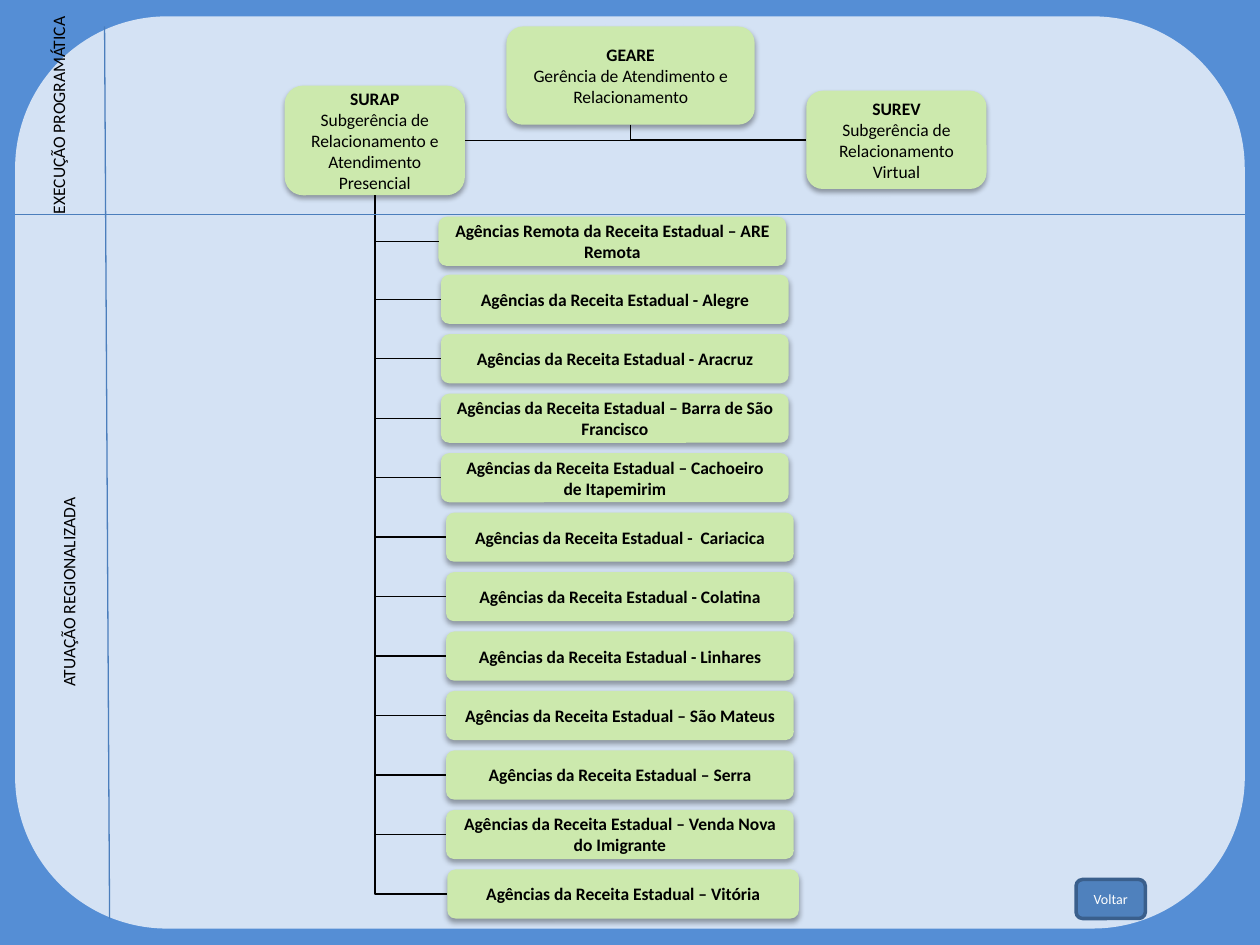
from dataclasses import dataclass

from lxml import etree
from pptx import Presentation
from pptx.dml.color import RGBColor
from pptx.enum import shapes, text
from pptx.oxml import ns
from pptx.util import Inches, Pt


@dataclass(frozen=True)
class Theme:
    back: str = "558ED5"
    panel: str = "D4E2F4"
    unit: str = "CCE9AD"
    button: str = "4F81BD"
    button_edge: str = "3A5F8C"
    divider: str = "4B7EBC"
    ink: str = "000000"
    white: str = "FFFFFF"
    font: str = "Calibri"
    body: float = 10
    small: float = 8
    line: float = 0.75


@dataclass(frozen=True)
class Box:
    left: float
    top: float
    width: float
    height: float
    title: str = ""
    detail: str = ""


T = Theme()
TOP, LEFT, BOTTOM, RIGHT = range(4)

PANEL = Box(0.12, 0.13, 9.76, 7.24)
GEARE = Box(4.02, 0.21, 1.97, 0.78, "GEARE", "Gerência de Atendimento e Relacionamento")
SURAP = Box(2.26, 0.68, 1.43, 0.87, "SURAP",
            "Subgerência de Relacionamento e Atendimento Presencial")
SUREV = Box(6.4, 0.72, 1.43, 0.78, "SUREV", "Subgerência de Relacionamento Virtual")
BACK_BUTTON = Box(8.54, 6.98, 0.55, 0.31, "Voltar")
BANDS = [Box(0.33, 0.02, 0.37, 1.79, "EXECUÇÃO PROGRAMÁTICA"),
         Box(0.41, 2.58, 0.37, 4.24, "ATUAÇÃO REGIONALIZADA")]

# Agencies: a remote one, then the cities at an equal pitch
FIRST_CITY, PITCH, AGENCY_W, AGENCY_H = 2.18, 0.472, 2.76, 0.39
CITIES = ["- Alegre", "- Aracruz", "– Barra de São Francisco",
          "– Cachoeiro de Itapemirim", "-  Cariacica", "- Colatina", "- Linhares",
          "– São Mateus", "– Serra", "– Venda Nova do Imigrante", "– Vitória"]
CITY_LEFTS = [3.5] * 4 + [3.54] * 6 + [3.55]
AGENCIES = [Box(3.48, 1.72, AGENCY_W, AGENCY_H,
                "Agências Remota da Receita Estadual – ARE Remota")]
AGENCIES += [Box(left, FIRST_CITY + i * PITCH, AGENCY_W, AGENCY_H,
                 f"Agências da Receita Estadual {city}")
             for i, (left, city) in enumerate(zip(CITY_LEFTS, CITIES))]
AGENCIES[-1] = Box(3.55, 6.9, 2.79, AGENCY_H, AGENCIES[-1].title)


def rgb(value: str) -> RGBColor:
    return RGBColor.from_string(value)


def place(box: Box) -> list:
    return [Inches(v) for v in (box.left, box.top, box.width, box.height)]


def write(tf, box: Box, size: float, color: str, bold: bool = False) -> None:
    """Centre the title of a box, with its detail below in regular weight."""
    tf.word_wrap = True
    tf.text = "\n".join(filter(None, (box.title, box.detail)))
    for i, p in enumerate(tf.paragraphs):
        p.alignment = text.PP_ALIGN.CENTER
        for r in p.runs:
            r.font.name, r.font.size = T.font, Pt(size)
            r.font.bold = bold and i == 0
            r.font.color.rgb = rgb(color)


def add_round(s, box: Box, fill: str):
    sp = s.shapes.add_shape(shapes.MSO_SHAPE.ROUNDED_RECTANGLE, *place(box))
    sp.shadow.inherit = False
    sp.fill.solid()
    sp.fill.fore_color.rgb = rgb(fill)
    sp.line.fill.background()
    sp.text_frame.vertical_anchor = text.MSO_ANCHOR.MIDDLE
    return sp


def add_unit(s, box: Box):
    """Green organisation box with a soft shadow."""
    sp = add_round(s, box, T.unit)
    write(sp.text_frame, box, T.body, T.ink, bold=True)
    effects = sp._element.spPr.find(ns.qn("a:effectLst"))
    shadow = etree.SubElement(effects, ns.qn("a:outerShdw"), blurRad=str(Pt(3.1)),
                              dist=str(Pt(1.8)), dir="5400000", rotWithShape="0")
    color = etree.SubElement(shadow, ns.qn("a:srgbClr"), val=T.ink)
    etree.SubElement(color, ns.qn("a:alpha"), val="35000")
    return sp


def add_line(s, kind, ends: tuple, color: str):
    cx = s.shapes.add_connector(kind, *(Inches(v) for v in ends))
    cx.line.color.rgb = rgb(color)
    cx.line.width = Pt(T.line)
    etree.SubElement(cx._element.spPr, ns.qn("a:effectLst"))
    return cx


def add_elbow(s, parent, child, side: int) -> None:
    """Run straight down from the parent, then sideways into the child."""
    cx = add_line(s, shapes.MSO_CONNECTOR.ELBOW, (0, 0, 1, 1), T.ink)
    cx.begin_connect(parent, BOTTOM)
    cx.end_connect(child, side)
    x1, y1, x2, y2 = cx.begin_x, cx.begin_y, cx.end_x, cx.end_y
    run, drop = abs(x2 - x1), y2 - y1
    # One-bend geometry is stored lying down and turned a quarter
    xfrm = cx._element.spPr.find(ns.qn("a:xfrm"))
    for flip in ("flipH", "flipV"):
        xfrm.attrib.pop(flip, None)
    if side == LEFT:
        xfrm.set("rot", "16200000")
        xfrm.set("flipH", "1")
    else:
        xfrm.set("rot", "5400000")
    cx._element.spPr.find(ns.qn("a:prstGeom")).set("prst", "bentConnector2")
    cx.left, cx.top = (x1 + x2 - drop) // 2, (y1 + y2 - run) // 2
    cx.width, cx.height = drop, run


def add_band(s, box: Box) -> None:
    """Band label reading upwards."""
    tf = s.shapes.add_textbox(*place(box)).text_frame
    write(tf, box, T.body, T.ink)
    tf.auto_size = text.MSO_AUTO_SIZE.SHAPE_TO_FIT_TEXT
    tf._txBody.bodyPr.set("vert", "vert270")


def main() -> None:
    prs = Presentation()
    prs.slide_width, prs.slide_height = Inches(10), Inches(7.5)
    s = prs.slides.add_slide(prs.slide_layouts[6])
    s.background.fill.solid()
    s.background.fill.fore_color.rgb = rgb(T.back)
    add_round(s, PANEL, T.panel)

    # Organisation boxes and their links
    geare, surap, surev = (add_unit(s, box) for box in (GEARE, SURAP, SUREV))
    add_elbow(s, geare, surap, RIGHT)
    add_elbow(s, geare, surev, LEFT)
    for agency in AGENCIES:
        add_elbow(s, surap, add_unit(s, agency), LEFT)

    # Bands and dividers
    for ends in ((0.12, 1.7, 9.88, 1.7), (0.83, 0.21, 0.87, 7.29)):
        add_line(s, shapes.MSO_CONNECTOR.STRAIGHT, ends, T.divider)
    for band in BANDS:
        add_band(s, band)

    # Back button
    button = add_round(s, BACK_BUTTON, T.button)
    button.line.color.rgb = rgb(T.button_edge)
    button.line.width = Pt(2)
    write(button.text_frame, BACK_BUTTON, T.small, T.white)

    prs.save("out.pptx")


if __name__ == "__main__":
    main()
